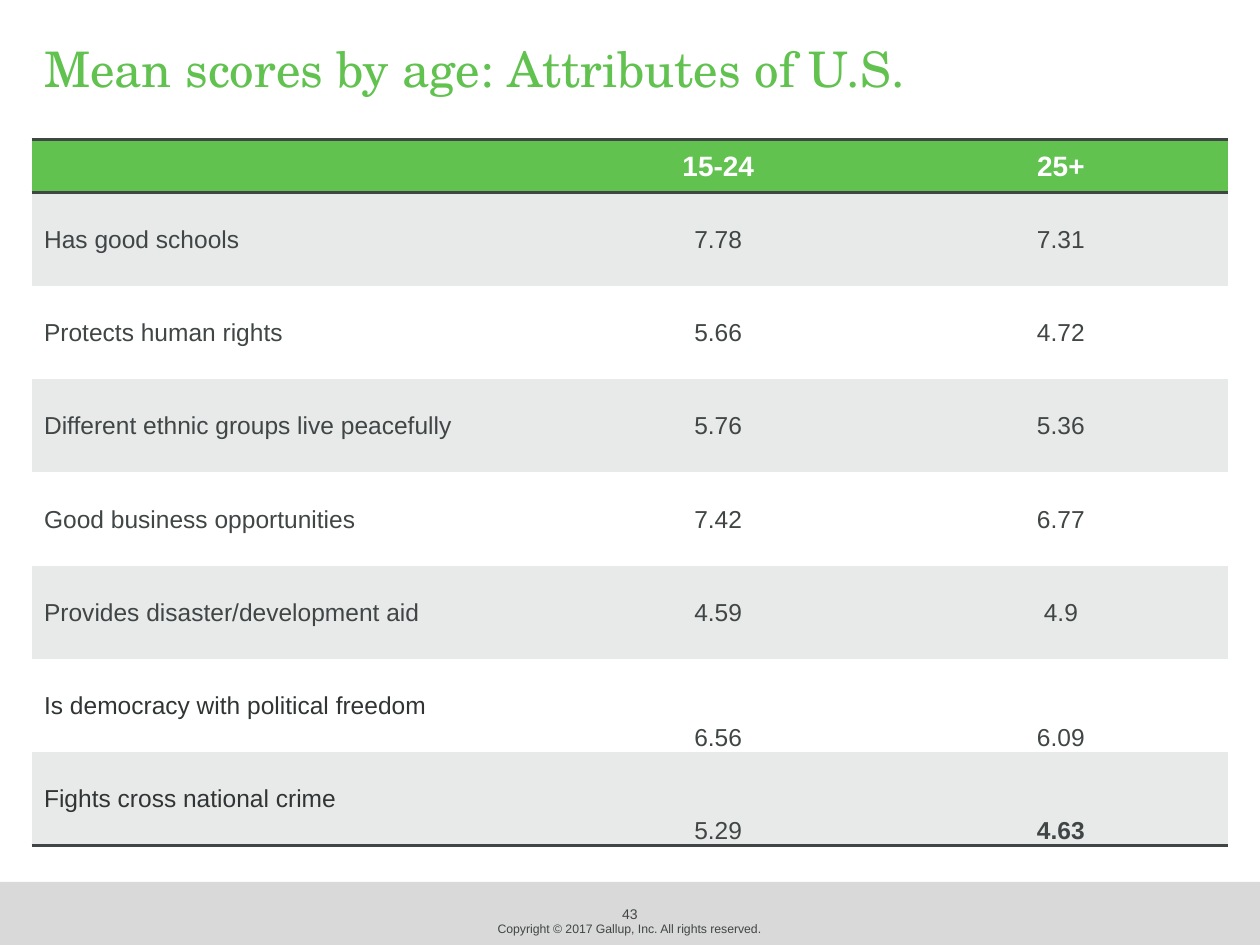
"""Build the slide of mean scores by age for attributes of the U.S."""
import lxml.etree
import pptx
import pptx.dml.color
import pptx.enum.shapes
import pptx.enum.text
import pptx.oxml.ns
import pptx.util

Inches = pptx.util.Inches
Pt = pptx.util.Pt
RGBColor = pptx.dml.color.RGBColor
Align = pptx.enum.text.PP_ALIGN
Anchor = pptx.enum.text.MSO_ANCHOR
qn = pptx.oxml.ns.qn

GREEN = RGBColor(0x61, 0xC2, 0x50)
DARK = RGBColor(0x40, 0x45, 0x45)
DARKER = RGBColor(0x30, 0x34, 0x34)
BAND = RGBColor(0xE8, 0xE9, 0xE9)
FOOTER = RGBColor(0xD9, 0xD9, 0xD9)
WHITE = RGBColor(0xFF, 0xFF, 0xFF)

TITLE_FONT = {"name": "TeX Gyre Schola", "size": Pt(28), "bold": False}
HEADER_FONT = {"name": "Arial", "size": Pt(16), "bold": True}
CELL_FONT = {"name": "Arial", "size": Pt(14), "bold": False}
TOTAL_FONT = CELL_FONT | {"bold": True}

HEADINGS = ("", "15-24", "25+")
SCORES = (
    ("Has good schools", "7.78", "7.31"),
    ("Protects human rights", "5.66", "4.72"),
    ("Different ethnic groups live peacefully", "5.76", "5.36"),
    ("Good business opportunities", "7.42", "6.77"),
    ("Provides disaster/development aid", "4.59", "4.9"),
    ("Is democracy with political freedom", "6.56", "6.09"),
    ("Fights cross national crime", "5.29", "4.63"),
)
COLUMN_WIDTHS = (4.06, 2.78, 2.66)
HEADER_HEIGHT, ROW_HEIGHT = 0.42, 0.74
FIRST_LOW_ROW = 6


def apply(target, values):
    """Set every attribute of the target from a dict."""
    for name, value in values.items():
        setattr(target, name, value)


class ScoreSlide:
    """Hold the style and the current slide."""

    def __init__(self, presentation):
        self.slide = presentation.slides.add_slide(presentation.slide_layouts[5])

    def set_text(self, paragraph, text, font, color, alignment):
        """Fill one paragraph with formatted text."""
        paragraph.text = text
        paragraph.alignment = alignment
        apply(paragraph.font, font)
        paragraph.font.color.rgb = color

    def title(self, text, box):
        """Place and format the title placeholder."""
        shape = self.slide.shapes.title
        apply(shape, dict(zip(("left", "top", "width", "height"), map(Inches, box))))
        shape.text_frame.vertical_anchor = Anchor.MIDDLE
        self.set_text(shape.text_frame.paragraphs[0], text, TITLE_FONT, GREEN, Align.LEFT)

    def bar(self, box, color):
        """Add a plain filled rectangle."""
        kind = pptx.enum.shapes.MSO_SHAPE.RECTANGLE
        shape = self.slide.shapes.add_shape(kind, *map(Inches, box))
        shape.shadow.inherit = False
        shape.fill.solid()
        shape.fill.fore_color.rgb = color
        shape.line.fill.background()

    def label(self, text, box, size):
        """Add a centred line of footer text."""
        frame = self.slide.shapes.add_textbox(*map(Inches, box)).text_frame
        apply(frame, {"word_wrap": False, "vertical_anchor": Anchor.MIDDLE})
        font = {"name": "Arial", "size": Pt(size)}
        self.set_text(frame.paragraphs[0], text, font, DARK, Align.CENTER)

    def borders(self, cell, ruled):
        """Rule the named sides of a cell and clear the others."""
        properties = cell._tc.get_or_add_tcPr()
        for side in "LRTB":
            line = lxml.etree.SubElement(properties, qn(f"a:ln{side}"))
            if side in ruled:
                line.set("w", str(Pt(2)))
                fill = lxml.etree.SubElement(line, qn("a:solidFill"))
                lxml.etree.SubElement(fill, qn("a:srgbClr"), val=str(DARK))
            else:
                lxml.etree.SubElement(line, qn("a:noFill"))

    def cell(self, cell, text, font, color, fill, ruled, is_label, anchor):
        """Format one table cell."""
        side = Inches(0.1 if is_label else 0.01)
        apply(cell, {"margin_left": side, "margin_right": side,
                     "margin_top": Inches(0.01), "margin_bottom": 0,
                     "vertical_anchor": anchor})
        self.borders(cell, ruled)
        cell.fill.solid()
        cell.fill.fore_color.rgb = fill
        alignment = Align.LEFT if is_label else Align.CENTER
        self.set_text(cell.text_frame.paragraphs[0], text, font, color, alignment)

    def table(self, rows, left, top):
        """Add the banded score table with a header row."""
        heights = [HEADER_HEIGHT] + [ROW_HEIGHT] * (len(rows) - 1)
        box = map(Inches, (left, top, sum(COLUMN_WIDTHS), sum(heights)))
        table = self.slide.shapes.add_table(len(rows), len(COLUMN_WIDTHS), *box).table
        apply(table, {"first_row": False, "horz_banding": False})
        for column, width in zip(table.columns, COLUMN_WIDTHS):
            column.width = Inches(width)
        last = len(rows) - 1
        ruled = {0: "TB", 1: "T", last: "B"}
        for r, (values, height) in enumerate(zip(rows, heights)):
            table.rows[r].height = Inches(height)
            for c, text in enumerate(values):
                is_label, low = c == 0, r >= FIRST_LOW_ROW
                font, color, fill = CELL_FONT, DARK, BAND if r % 2 else WHITE
                if r == 0:
                    font, color, fill = HEADER_FONT, WHITE, GREEN
                elif low and is_label:
                    color = DARKER
                elif (r, c) == (last, len(values) - 1):
                    font = TOTAL_FONT
                anchor = Anchor.BOTTOM if low and not is_label else Anchor.MIDDLE
                self.cell(table.cell(r, c), text, font, color, fill,
                          ruled.get(r, ""), is_label, anchor)


def main():
    """Build and save the presentation."""
    presentation = pptx.Presentation()
    apply(presentation, {"slide_width": Inches(10), "slide_height": Inches(7.5)})
    slide = ScoreSlide(presentation)
    slide.bar((0, 7, 10, 0.5), FOOTER)
    slide.title("Mean scores by age: Attributes of U.S.", (0.25, 0.25, 9.75, 0.57))
    slide.label("43", (4.75, 7.13, 0.5, 0.24), 8)
    slide.table((HEADINGS, *SCORES), 0.25, 1.11)
    slide.label("Copyright © 2017 Gallup, Inc. All rights reserved.",
                (3.12, 7.26, 3.75, 0.22), 7)
    presentation.save("out.pptx")


if __name__ == "__main__":
    main()
